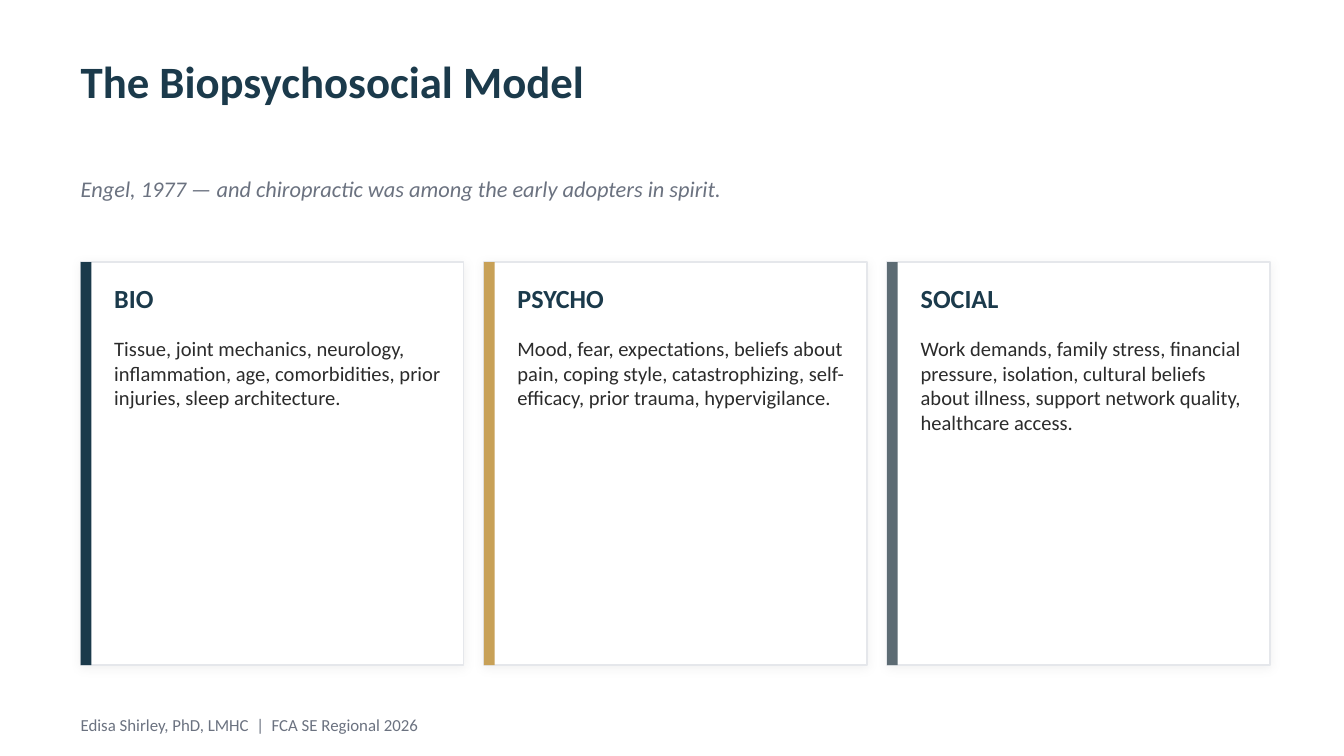
import pptx
import pptx.util
import pptx.dml.color
import pptx.enum.shapes
import pptx.enum.text
import pptx.oxml
import pptx.oxml.ns

Inches = pptx.util.Inches
Pt = pptx.util.Pt
RGBColor = pptx.dml.color.RGBColor

NAVY = RGBColor(0x1B, 0x3A, 0x4B)
GOLD = RGBColor(0xC8, 0xA1, 0x57)
SLATE = RGBColor(0x5C, 0x6B, 0x73)
GRAY = RGBColor(0x6B, 0x72, 0x80)
BORDER = RGBColor(0xE5, 0xE7, 0xEB)
INK = RGBColor(0x2B, 0x2B, 0x2B)
WHITE = RGBColor(0xFF, 0xFF, 0xFF)

SLIDE_WIDTH = 10
MARGIN = 0.6
CARD_TOP, CARD_WIDTH, CARD_HEIGHT, CARD_GAP = 1.95, 2.85, 3, 0.15
ACCENT_WIDTH = 0.08
TEXT_INDENT, TEXT_WIDTH = 0.25, 2.45

CARDS = [
    ("BIO", NAVY, "Tissue, joint mechanics, neurology, inflammation, age, "
     "comorbidities, prior injuries, sleep architecture."),
    ("PSYCHO", GOLD, "Mood, fear, expectations, beliefs about pain, coping style, "
     "catastrophizing, self-efficacy, prior trauma, hypervigilance."),
    ("SOCIAL", SLATE, "Work demands, family stress, financial pressure, isolation, "
     "cultural beliefs about illness, support network quality, healthcare access."),
]

SOFT_SHADOW = (
    f'<a:effectLst {pptx.oxml.ns.nsdecls("a")}>'
    f'<a:outerShdw blurRad="{Pt(6)}" dist="{Pt(1)}" dir="5400000" '
    'algn="bl" rotWithShape="0">'
    '<a:srgbClr val="000000"><a:alpha val="5000"/></a:srgbClr>'
    '</a:outerShdw></a:effectLst>'
)


def write_text(frame, text, *, font, size, color, bold=False, italic=False,
               space_after=None):
    paragraph = frame.paragraphs[0]
    if space_after is not None:
        paragraph.space_after = Pt(space_after)
    run = paragraph.add_run()
    run.text = text
    run.font.name = font
    run.font.size = Pt(size)
    run.font.bold = bold
    run.font.italic = italic
    run.font.color.rgb = color


class SlideBuilder:
    """Holds the shared style and the slide being filled."""

    font = "Calibri"

    def __init__(self, slide):
        self.slide = slide

    def text(self, left, top, width, height, text, **style):
        box = self.slide.shapes.add_textbox(
            Inches(left), Inches(top), Inches(width), Inches(height))
        frame = box.text_frame
        frame.word_wrap = True
        frame.vertical_anchor = pptx.enum.text.MSO_ANCHOR.TOP
        frame.margin_left = frame.margin_right = 0
        frame.margin_top = frame.margin_bottom = 0
        write_text(frame, text, font=self.font, **style)

    def rectangle(self, left, top, width, height, fill, line=None, shadow=False):
        shape = self.slide.shapes.add_shape(
            pptx.enum.shapes.MSO_SHAPE.RECTANGLE,
            Inches(left), Inches(top), Inches(width), Inches(height))
        shape.fill.solid()
        shape.fill.fore_color.rgb = fill
        if line is None:
            shape.line.fill.background()
        else:
            shape.line.color.rgb = line
            shape.line.width = Pt(0.75)
        if shadow:
            shape.element.spPr.append(pptx.oxml.parse_xml(SOFT_SHADOW))
        else:
            shape.shadow.inherit = False

    def card(self, left, heading, accent, body):
        self.rectangle(left, CARD_TOP, CARD_WIDTH, CARD_HEIGHT, WHITE,
                       line=BORDER, shadow=True)
        self.rectangle(left, CARD_TOP, ACCENT_WIDTH, CARD_HEIGHT, accent)
        text_left = left + TEXT_INDENT
        self.text(text_left, CARD_TOP + 0.15, TEXT_WIDTH, 0.35, heading,
                  size=14, color=NAVY, bold=True)
        self.text(text_left, CARD_TOP + 0.55, TEXT_WIDTH, 2.3, body,
                  size=11, color=INK, space_after=4)


def main():
    presentation = pptx.Presentation()
    presentation.slide_width = Inches(SLIDE_WIDTH)
    presentation.slide_height = Inches(SLIDE_WIDTH * 9 / 16)
    slide = presentation.slides.add_slide(presentation.slide_layouts[6])
    slide.background.fill.solid()
    slide.background.fill.fore_color.rgb = WHITE

    builder = SlideBuilder(slide)
    builder.text(MARGIN, 0.4, 8.8, 0.55, "The Biopsychosocial Model",
                 size=24, color=NAVY, bold=True)
    builder.text(MARGIN, 5.32, 8.8, 0.25,
                 "Edisa Shirley, PhD, LMHC  |  FCA SE Regional 2026",
                 size=9, color=GRAY)
    builder.text(MARGIN, 1.3, 8.85, 0.4,
                 "Engel, 1977 — and chiropractic was among the early adopters in spirit.",
                 size=12, color=GRAY, italic=True)
    for index, (heading, accent, body) in enumerate(CARDS):
        builder.card(MARGIN + index * (CARD_WIDTH + CARD_GAP), heading, accent, body)

    presentation.save("out.pptx")


if __name__ == "__main__":
    main()
